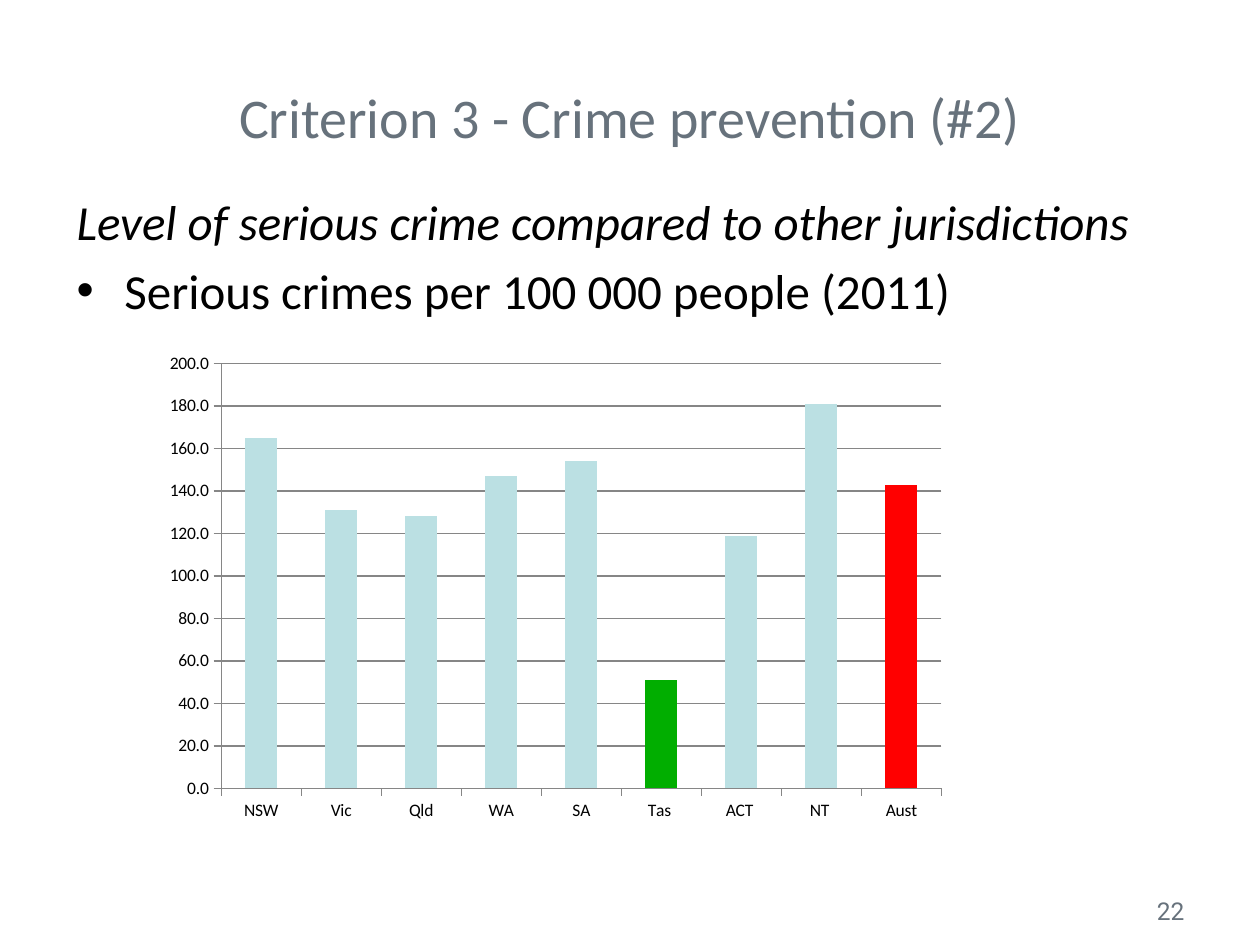
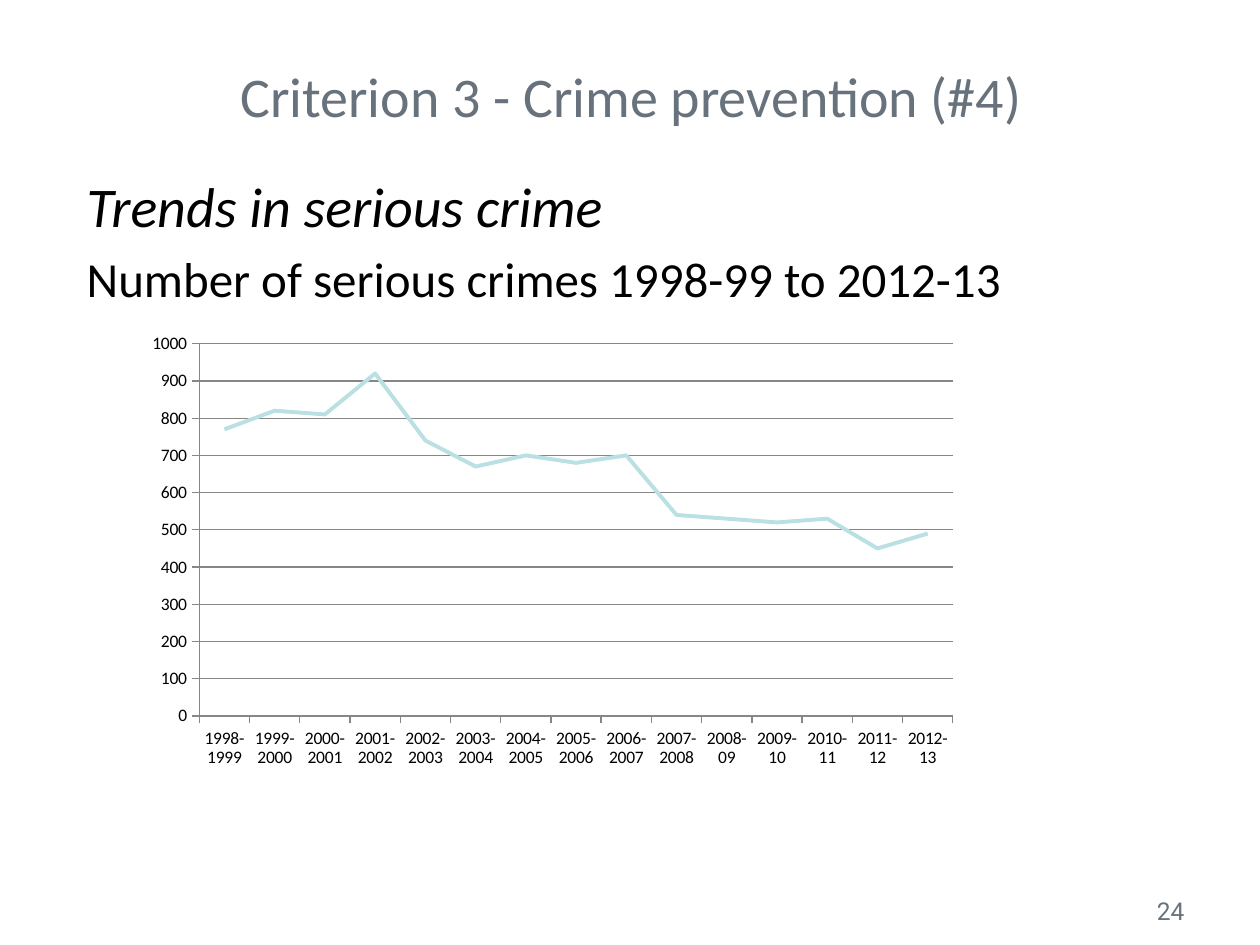
from lxml.etree import SubElement
from pptx import Presentation
from pptx.chart.data import CategoryChartData
from pptx.dml.color import RGBColor
from pptx.enum.chart import XL_CHART_TYPE, XL_MARKER_STYLE, XL_TICK_MARK
from pptx.enum.text import MSO_ANCHOR, PP_ALIGN
from pptx.oxml import parse_xml
from pptx.oxml.ns import nsdecls, qn
from pptx.util import Inches, Pt

COLORS = {"title": "67727C", "text": "000000", "series": "BBE0E3",
          "tasmania": "01AE00", "australia": "FF0000", "grid": "868686"}
FONT, NUMBER_FONT = "Calibri", "Roboto"
BODY_SIZE = (9, 4.95)
PAGE_BOX = (7.17, 7.06, 2.33, 0.39)

# Each body line: text, size, italic, bulleted
SLIDES = [
    {
        "title": "Criterion 3 - Crime prevention (#2)",
        "title_box": (0.5, 0.3, 9, 1.25),
        "body_at": (0.51, 1.47),
        "body": [
            ("Level of serious crime compared to other jurisdictions", 28, True, False),
            ("Serious crimes per 100 000 people (2011)", 28, False, True),
        ],
        "page": "22",
        "kind": XL_CHART_TYPE.COLUMN_STACKED,
        "chart_box": (1.22, 2.73, 6.38, 3.86),
        "rates": {"NSW": 165, "Vic": 131, "Qld": 128, "WA": 147, "SA": 154,
                  "Tas ": 51, "ACT ": 119, "NT ": 181, "Aust": 143},
        "highlights": {"Tas ": "tasmania", "Aust": "australia"},
        "scale": (200, 20, "0.0"),
    },
    {
        "title": "Criterion 3 - Crime prevention (#4)",
        "title_box": (0.51, 0.13, 9, 1.25),
        "body_at": (0.59, 1.31),
        "body": [
            ("Trends in serious crime", 32, True, False),
            ("Number of serious crimes 1998-99 to 2012-13", 28, False, False),
        ],
        "page": "24",
        "kind": XL_CHART_TYPE.LINE,
        "chart_box": (0.91, 2.65, 6.72, 3.94),
        "rates": {"1998-1999": 770, "1999-2000": 820, "2000-2001": 810,
                  "2001-2002": 920, "2002-2003": 740, "2003-2004": 670,
                  "2004-2005": 700, "2005-2006": 680, "2006-2007": 700,
                  "2007-2008": 540, "2008-09": 530, "2009-10": 520,
                  "2010-11": 530, "2011-12": 450, "2012-13": 490},
        "scale": (1000, 100, "0"),
        "plot": {"x": 0.1, "y": 0.02, "w": 0.89, "h": 0.75},
    },
]


def rgb(name):
    return RGBColor.from_string(COLORS[name])


def inches(*lengths):
    return [Inches(length) for length in lengths]


def add_text(paragraph, text, size, color, font=FONT, italic=False):
    run = paragraph.add_run()
    run.text = text
    run.font.name, run.font.size = font, Pt(size)
    run.font.italic = italic
    run.font.color.rgb = rgb(color)


def add_title(slide, content):
    title = slide.shapes.title
    title.left, title.top, title.width, title.height = inches(*content["title_box"])
    title.text_frame.vertical_anchor = MSO_ANCHOR.MIDDLE
    paragraph = title.text_frame.paragraphs[0]
    paragraph.alignment = PP_ALIGN.CENTER
    add_text(paragraph, content["title"], 32, "title")


def add_body(slide, content):
    body = slide.shapes.add_textbox(*inches(*content["body_at"], *BODY_SIZE))
    frame = body.text_frame
    frame.word_wrap = True
    for index, (text, size, italic, bulleted) in enumerate(content["body"]):
        paragraph = frame.add_paragraph() if index else frame.paragraphs[0]
        if bulleted:
            properties = paragraph._p.get_or_add_pPr()
            properties.set("marL", str(Inches(0.38)))
            properties.set("indent", str(Inches(-0.38)))
            SubElement(properties, qn("a:buFont"), typeface="Arial")
            SubElement(properties, qn("a:buChar"), char="•")
        if index:
            paragraph.space_before = Pt(size * 0.2)
        add_text(paragraph, text, size, "text", italic=italic)


def add_page_number(slide, number):
    frame = slide.shapes.add_textbox(*inches(*PAGE_BOX)).text_frame
    frame.word_wrap = True
    frame.paragraphs[0].alignment = PP_ALIGN.RIGHT
    add_text(frame.paragraphs[0], number, 14, "title", NUMBER_FONT)


def set_plot_area(chart, plot):
    """Fix the inner plot area as fractions of the chart."""
    sides = "".join(f'<c:{side} val="{share}"/>' for side, share in plot.items())
    layout = parse_xml(
        f'<c:layout {nsdecls("c")}><c:manualLayout><c:layoutTarget val="inner"/>'
        f'<c:xMode val="edge"/><c:yMode val="edge"/>{sides}'
        "</c:manualLayout></c:layout>")
    area = chart._chartSpace.chart.plotArea
    for old in area.findall(qn("c:layout")):
        area.remove(old)
    area.insert(0, layout)


def style_axes(chart, maximum, step, number_format):
    for axis in (chart.category_axis, chart.value_axis):
        axis.major_tick_mark = XL_TICK_MARK.OUTSIDE
        axis.minor_tick_mark = XL_TICK_MARK.NONE
        axis.format.line.color.rgb = rgb("grid")
        axis.format.line.width = Pt(0.75)
    values = chart.value_axis
    values.minimum_scale, values.maximum_scale, values.major_unit = 0, maximum, step
    values.tick_labels.number_format = number_format
    values.tick_labels.number_format_is_linked = False
    values.has_major_gridlines = True
    values.major_gridlines.format.line.color.rgb = rgb("grid")
    values.major_gridlines.format.line.width = Pt(0.75)


def add_crime_chart(slide, content):
    rates = content["rates"]
    data = CategoryChartData()
    data.categories = list(rates)
    data.add_series("Series 1", list(rates.values()))
    chart = slide.shapes.add_chart(
        content["kind"], *inches(*content["chart_box"]), data).chart
    chart.has_legend = chart.has_title = False
    chart.font.name, chart.font.size = FONT, Pt(10)
    chart.font.color.rgb = rgb("text")
    style_axes(chart, *content["scale"])

    plot = chart.plots[0]
    plot.vary_by_categories = False
    series = plot.series[0]
    if content["kind"] == XL_CHART_TYPE.LINE:
        series.smooth = False
        series.marker.style = XL_MARKER_STYLE.NONE
        series.format.line.color.rgb = rgb("series")
        series.format.line.width = Pt(2.25)
    else:
        plot.gap_width, plot.overlap = 150, 100
        series.format.fill.solid()
        series.format.fill.fore_color.rgb = rgb("series")
        for place, color in content["highlights"].items():
            fill = series.points[list(rates).index(place)].format.fill
            fill.solid()
            fill.fore_color.rgb = rgb(color)
    if "plot" in content:
        set_plot_area(chart, content["plot"])


def main():
    deck = Presentation()
    deck.slide_width, deck.slide_height = inches(10, 7.5)
    for content in SLIDES:
        slide = deck.slides.add_slide(deck.slide_layouts[5])
        add_title(slide, content)
        add_body(slide, content)
        add_page_number(slide, content["page"])
        add_crime_chart(slide, content)
    deck.save("out.pptx")


if __name__ == "__main__":
    main()
